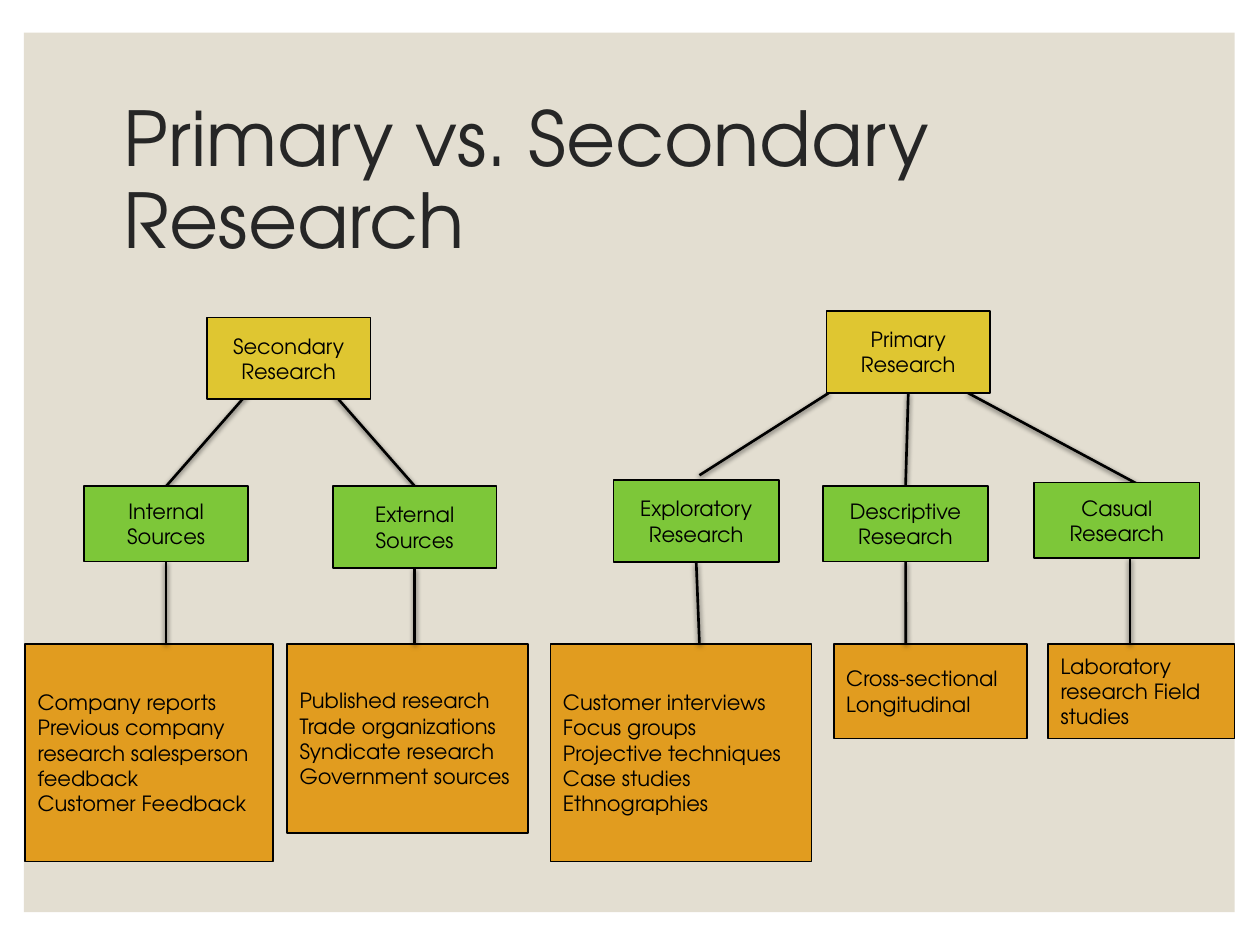
from collections import namedtuple

from lxml import etree
from pptx import Presentation
from pptx.dml.color import RGBColor
from pptx.enum.shapes import MSO_CONNECTOR, MSO_SHAPE
from pptx.enum.text import MSO_ANCHOR, MSO_AUTO_SIZE, PP_ALIGN
from pptx.oxml.ns import qn
from pptx.util import Cm, Pt

COLORS = {
    "panel": "E3DED1",
    "title": "262626",
    "ink": "000000",
    "topic": "DFC631",
    "branch": "7DC739",
    "detail": "E19C1F",
}
FONT = "TeX Gyre Adventor"
TOP, BOTTOM = 0, 2
FORK_TOP = 7.92
DETAIL_TOP = 12.98

Topic = namedtuple("Topic", "text left top")
# fork is None where the line leaves the middle of the topic's lower side;
# joins names the sides of the branch whose middle meets a line.
Branch = namedtuple("Branch", "topic text left top width height fork tip stem joins")
Detail = namedtuple("Detail", "lines left width height")

TOPICS = {
    "secondary": Topic("Secondary Research", 4.17, 6.4),
    "primary": Topic("Primary Research", 16.66, 6.27),
}
BRANCHES = [
    Branch("secondary", "Internal Sources", 1.7, 9.8, 3.3, 1.52,
           5, (3.35, 9.73), 3.35, (TOP, BOTTOM)),
    Branch("secondary", "External Sources", 6.71, 9.8, 3.3, 1.65,
           6.71, (8.36, 9.8), 8.36, (TOP, BOTTOM)),
    Branch("primary", "Exploratory Research", 12.37, 9.68, 3.33, 1.65,
           16.71, (14.1, 9.58), 14.1, (BOTTOM,)),
    Branch("primary", "Descriptive Research", 16.59, 9.8, 3.33, 1.52,
           None, (18.26, 9.8), 18.26, (TOP, BOTTOM)),
    Branch("primary", "Casual Research", 20.85, 9.73, 3.33, 1.52,
           19.51, (23.01, 9.8), 22.78, ()),
]
DETAILS = [
    Detail(["Company reports Previous company research salesperson feedback",
            "Customer Feedback"], 0.51, 5, 4.39),
    Detail(["Published research Trade organizations Syndicate research "
            "Government sources"], 5.79, 4.85, 3.81),
    Detail(["Customer interviews Focus groups Projective techniques "
            "Case studies Ethnographies"], 11.1, 5.26, 4.39),
    Detail(["Cross-sectional Longitudinal"], 16.81, 3.89, 1.91),
    Detail(["Laboratory research Field studies"], 21.13, 3.76, 1.91),
]


def write(frame, lines, size=12, color="ink", align=PP_ALIGN.LEFT, spacing=None):
    frame.word_wrap = True
    frame.auto_size = MSO_AUTO_SIZE.NONE
    frame.vertical_anchor = MSO_ANCHOR.MIDDLE
    for index, line in enumerate(lines):
        para = frame.add_paragraph() if index else frame.paragraphs[0]
        para.alignment = align
        if spacing:
            para.line_spacing = spacing
        span = para.add_run()
        span.text = line
        span.font.name = FONT
        span.font.size = Pt(size)
        span.font.color.rgb = RGBColor.from_string(COLORS[color])


class Chart:
    """Holds the current slide and draws the parts of a tree in one style."""

    def __init__(self, page):
        self.page = page

    def panel(self, left, top, width, height):
        panel = self.box(left, top, width, height, "panel")
        panel.line.fill.background()
        self.page.shapes.title._element.addprevious(panel._element)

    def title(self, text, left, top, width, height):
        title = self.page.shapes.title
        title.left, title.top = Cm(left), Cm(top)
        title.width, title.height = Cm(width), Cm(height)
        write(title.text_frame, [text], size=43.2, color="title", spacing=0.9)

    def box(self, left, top, width, height, fill, lines=(), align=PP_ALIGN.LEFT):
        box = self.page.shapes.add_shape(
            MSO_SHAPE.RECTANGLE, Cm(left), Cm(top), Cm(width), Cm(height))
        box.shadow.inherit = False
        box.fill.solid()
        box.fill.fore_color.rgb = RGBColor.from_string(COLORS[fill])
        box.line.color.rgb = RGBColor.from_string(COLORS["ink"])
        box.line.width = Pt(1)
        write(box.text_frame, lines, align=align)
        return box

    def connector(self, start, end, behind):
        """Draw a shadowed line below the box given as behind."""
        line = self.page.shapes.add_connector(
            MSO_CONNECTOR.STRAIGHT, *(Cm(value) for value in (*start, *end)))
        line.line.color.rgb = RGBColor.from_string(COLORS["ink"])
        line.line.width = Pt(1.5)
        effects = etree.SubElement(line._element.spPr, qn("a:effectLst"))
        shadow = etree.SubElement(
            effects, qn("a:outerShdw"), blurRad=str(Pt(3)), dist=str(Pt(1)),
            dir="5400000", rotWithShape="0")
        color = etree.SubElement(shadow, qn("a:srgbClr"), val=COLORS["ink"])
        etree.SubElement(color, qn("a:alpha"), val="63000")
        behind._element.addprevious(line._element)
        return line


def main():
    deck = Presentation()
    deck.slide_width, deck.slide_height = Cm(25.4), Cm(19.05)
    chart = Chart(deck.slides.add_slide(deck.slide_layouts[5]))
    chart.panel(0.48, 0.66, 24.41, 17.73)
    chart.title("Primary vs. Secondary Research", 2.24, 1.78, 20.96, 3.81)

    for detail in DETAILS:
        chart.box(detail.left, DETAIL_TOP, detail.width, detail.height,
                  "detail", detail.lines)

    topics = {
        name: chart.box(topic.left, topic.top, 3.3, 1.65, "topic",
                        [topic.text], PP_ALIGN.CENTER)
        for name, topic in TOPICS.items()
    }
    lowest_heading = topics["secondary"]

    for branch in BRANCHES:
        box = chart.box(branch.left, branch.top, branch.width, branch.height,
                        "branch", [branch.text], PP_ALIGN.CENTER)
        fork_x = branch.tip[0] if branch.fork is None else branch.fork
        fork = chart.connector((fork_x, FORK_TOP), branch.tip, lowest_heading)
        if branch.fork is None:
            fork.begin_connect(topics[branch.topic], BOTTOM)
        if TOP in branch.joins:
            fork.end_connect(box, TOP)
        stem = chart.connector((branch.stem, branch.top + branch.height),
                               (branch.stem, DETAIL_TOP), lowest_heading)
        if BOTTOM in branch.joins:
            stem.begin_connect(box, BOTTOM)

    deck.save("out.pptx")


if __name__ == "__main__":
    main()
